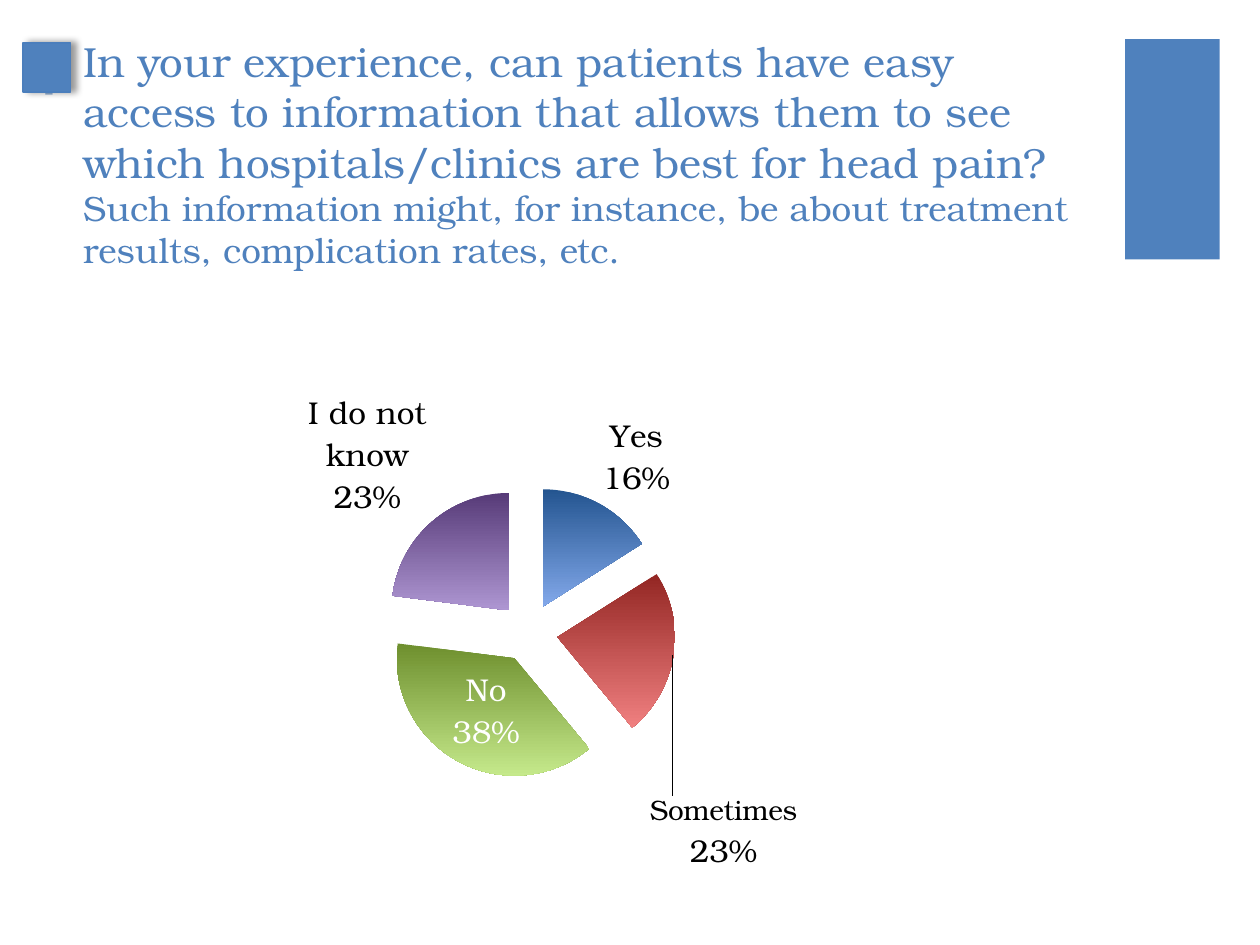
from dataclasses import dataclass

from lxml import etree
from pptx import Presentation
from pptx.chart.data import CategoryChartData
from pptx.dml.color import RGBColor
from pptx.enum import chart as ch, shapes, text
from pptx.oxml import parse_xml
from pptx.oxml.ns import nsdecls, qn
from pptx.util import Inches, Pt

FONT = "TeX Gyre Bonum"
BLUE = RGBColor(0x4F, 0x81, 0xBD)
EDGE_BLUE = RGBColor(0x4B, 0x7E, 0xBC)
PALE_BLUE = RGBColor(0x95, 0xB3, 0xD7)
BLACK = RGBColor(0, 0, 0)
WHITE = RGBColor(0xFF, 0xFF, 0xFF)


@dataclass
class Answer:
    name: str
    percent: int
    dark: RGBColor
    light: RGBColor


ANSWERS = [
    Answer("Yes", 16, RGBColor(0x24, 0x55, 0x90), RGBColor(0x82, 0xA8, 0xEA)),
    Answer("Sometimes", 23, RGBColor(0x93, 0x26, 0x23), RGBColor(0xF0, 0x80, 0x80)),
    Answer("No", 38, RGBColor(0x6E, 0x8F, 0x2E), RGBColor(0xC5, 0xE9, 0x8B)),
    Answer("I do not know", 23, RGBColor(0x57, 0x3B, 0x78), RGBColor(0xAE, 0x96, 0xD2)),
]


def style(font, size: float, color: RGBColor, bold: bool = False) -> None:
    font.name, font.size, font.bold = FONT, Pt(size), bold
    font.color.rgb = color


def add_block(slide, left: float, top: float, width: float, height: float):
    block = slide.shapes.add_shape(shapes.MSO_SHAPE.RECTANGLE, Inches(left),
                                   Inches(top), Inches(width), Inches(height))
    block.shadow.inherit = False
    block.fill.solid()
    block.fill.fore_color.rgb = BLUE
    block.line.fill.background()
    return block


def manual_layout(inner: bool = False, **places: float):
    """Chart layout element with places as fractions of the chart."""
    target = '<c:layoutTarget val="inner"/>' if inner else ""
    modes = '<c:xMode val="edge"/><c:yMode val="edge"/>' if inner else ""
    values = "".join(f'<c:{key} val="{value}"/>' for key, value in places.items())
    return parse_xml(f'<c:layout {nsdecls("c")}><c:manualLayout>{target}{modes}'
                     f'{values}</c:manualLayout></c:layout>')


def add_separator(labels) -> None:
    separator = etree.Element(qn("c:separator"))
    separator.text = "\n"
    labels.find(qn("c:showBubbleSize")).addnext(separator)


def add_title(slide) -> None:
    title = slide.shapes.title
    title.left, title.top = Inches(0.56), Inches(0.23)
    title.width, title.height = Inches(8.26), Inches(1.22)
    frame = title.text_frame
    frame.word_wrap = True
    frame.auto_size = text.MSO_AUTO_SIZE.NONE
    frame.vertical_anchor = text.MSO_ANCHOR.TOP
    paragraph = frame.paragraphs[0]
    paragraph.alignment = text.PP_ALIGN.LEFT
    question = paragraph.add_run()
    question.text = ("In your experience, can patients have easy access to information "
                     "that allows them to see which hospitals/clinics are best for head pain? ")
    style(question.font, 24, BLUE)
    paragraph.add_line_break()
    remark = paragraph.add_run()
    remark.text = ("Such information might, for instance, be about treatment results, "
                   "complication rates, etc.")
    style(remark.font, 20, BLUE)


def add_plus(slide) -> None:
    plus = slide.shapes.add_textbox(Inches(0.24), Inches(0.25), Inches(0.29), Inches(0.61))
    frame = plus.text_frame
    frame.word_wrap = True
    frame.margin_left = frame.margin_right = frame.margin_top = frame.margin_bottom = 0
    frame.text = "+"
    style(frame.paragraphs[0].font, 36, PALE_BLUE, bold=True)


def add_marker(slide) -> None:
    marker = add_block(slide, 0.18, 0.34, 0.38, 0.39)
    marker.line.color.rgb = EDGE_BLUE
    marker.line.width = Pt(1)
    effects = marker._element.spPr.find(qn("a:effectLst"))
    effects.append(parse_xml(
        f'<a:outerShdw {nsdecls("a")} blurRad="{Pt(4)}" dist="{Pt(3)}" dir="0" '
        'rotWithShape="0"><a:srgbClr val="000000"><a:alpha val="40000"/></a:srgbClr>'
        '</a:outerShdw>'))


def add_answer_pie(slide) -> None:
    data = CategoryChartData()
    data.categories = [answer.name for answer in ANSWERS]
    data.add_series("Series 1", [answer.percent for answer in ANSWERS])
    chart = slide.shapes.add_chart(ch.XL_CHART_TYPE.PIE, Inches(1.37), Inches(2.89),
                                   Inches(6.14), Inches(4.02), data).chart
    chart.has_legend = chart.has_title = False
    style(chart.font, 18, BLACK)
    plot = chart.plots[0]
    plot.vary_by_categories = True
    plot_area = chart._chartSpace.chart.plotArea
    for layout in plot_area.findall(qn("c:layout")):
        plot_area.remove(layout)
    plot_area.insert(0, manual_layout(inner=True, x=0.27, y=0.24, w=0.38, h=0.58))

    # Slices
    series = plot.series[0]
    for index, answer in enumerate(ANSWERS):
        fill = series.points[index].format.fill
        fill.gradient()
        fill.gradient_angle = 270
        for stop, color in zip(fill.gradient_stops, (answer.dark, answer.light)):
            stop.color.rgb = color
    explosion = etree.Element(qn("c:explosion"), val="25")
    series._element.find(qn("c:dPt")).addprevious(explosion)

    # Labels outside the slices, without automatic leader lines
    labels = series.data_labels
    labels.show_value = False
    labels.show_category_name = labels.show_percentage = True
    labels.position = ch.XL_LABEL_POSITION.OUTSIDE_END
    style(labels.font, 18, BLACK)
    add_separator(labels._element)
    labels._element.find(qn("c:showLeaderLines")).set("val", "0")

    # "Sometimes" is moved below its slice
    moved = series.points[1].data_label
    frame = moved.text_frame
    frame.text = f"{ANSWERS[1].name}\n{ANSWERS[1].percent}%"
    for paragraph, size in zip(frame.paragraphs, (16, 18)):
        style(paragraph.runs[0].font, size, BLACK)
    moved.position = ch.XL_LABEL_POSITION.OUTSIDE_END

    # "No" is white, inside its slice
    inside = series.points[2].data_label
    style(inside.font, 18, WHITE)
    inside.position = ch.XL_LABEL_POSITION.CENTER

    for label in labels._element.findall(qn("c:dLbl")):
        for flag, value in (("showVal", "0"), ("showCatName", "1"), ("showPercent", "1")):
            label.find(qn(f"c:{flag}")).set("val", value)
        add_separator(label)
    moved_label = labels._element.find(qn("c:dLbl"))
    moved_label.find(qn("c:idx")).addnext(manual_layout(x=-0.04, y=0.36))


def add_leader(slide) -> None:
    """Line from the "Sometimes" slice down to the top of its label."""
    leader = slide.shapes.add_connector(shapes.MSO_CONNECTOR.STRAIGHT, Inches(5.34),
                                        Inches(5.2), Inches(5.34), Inches(6.32))
    leader.line.color.rgb = BLACK
    leader.line.width = Pt(0.5)
    etree.SubElement(leader._element.spPr, qn("a:effectLst"))


def main() -> None:
    deck = Presentation()
    deck.slide_width, deck.slide_height = Inches(10), Inches(7.5)
    slide = deck.slides.add_slide(deck.slide_layouts[5])
    add_block(slide, 8.93, 0.31, 0.75, 1.75)
    add_plus(slide)
    add_title(slide)
    add_answer_pie(slide)
    add_leader(slide)
    add_marker(slide)
    deck.save("out.pptx")


if __name__ == "__main__":
    main()
